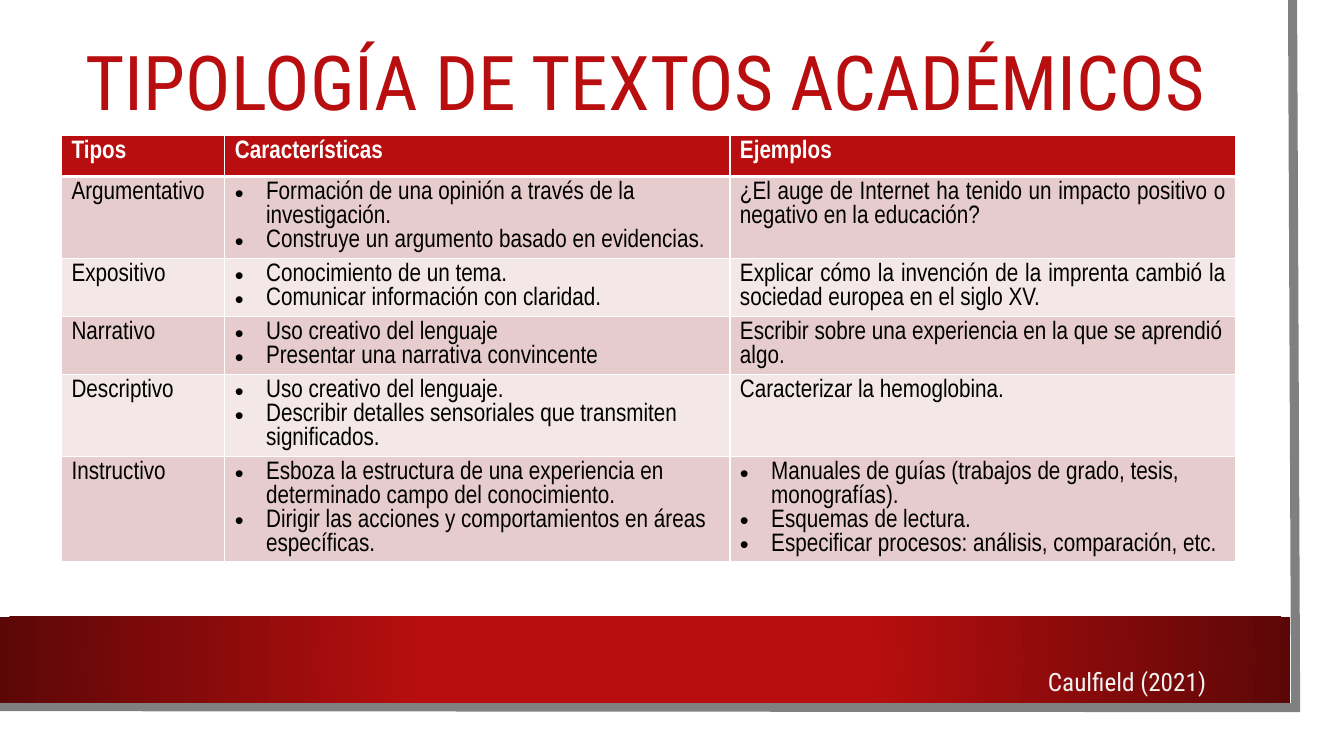
import pptx
import pptx.util
import pptx.dml.color
import pptx.enum.shapes
import pptx.enum.text
import pptx.oxml
import pptx.oxml.ns
from lxml import etree

TITLE = "TIPOLOGÍA DE TEXTOS ACADÉMICOS"
CREDIT = "Caulfield (2021) "
# A tuple is a bulleted cell, a string a plain one.
ROWS = [
    ("Tipos", "Características", "Ejemplos"),
    ("Argumentativo",
     ("Formación de una opinión a través de la investigación.",
      "Construye un argumento basado en evidencias."),
     "¿El auge de Internet ha tenido un impacto positivo o negativo en la educación?"),
    ("Expositivo",
     ("Conocimiento de un tema.", "Comunicar información con claridad."),
     "Explicar cómo la invención de la imprenta cambió la sociedad europea en el siglo XV."),
    ("Narrativo",
     ("Uso creativo del lenguaje", "Presentar una narrativa convincente"),
     "Escribir sobre una experiencia en la que se aprendió algo."),
    ("Descriptivo",
     ("Uso creativo del lenguaje.",
      "Describir detalles sensoriales que transmiten significados."),
     "Caracterizar la hemoglobina."),
    ("Instructivo",
     ("Esboza la estructura de una experiencia en determinado campo del conocimiento.",
      "Dirigir las acciones y comportamientos en áreas específicas."),
     ("Manuales de guías (trabajos de grado, tesis, monografías).",
      "Esquemas de lectura.",
      "Especificar procesos: análisis, comparación, etc.")),
]
JUST = {(1, 2), (2, 2)}
COLS = (1.62, 5.01, 5.02)
HIGH = 0.41  # least row height; rows grow with their text
HUES = {"red": "B80E0F", "dark": "5C0707", "gray": "808080", "white": "FFFFFF",
        "black": "000000", "odd": "E6CCCC", "even": "F3E7E7", "pale": "F2F2F2"}
HEAD, BODY = "Roboto Condensed", "Arial Narrow"

Inches, Pt = pptx.util.Inches, pptx.util.Pt
ALIGN = pptx.enum.text.PP_ALIGN
NS = pptx.oxml.ns.nsdecls("a")
qn = pptx.oxml.ns.qn


def hue(name):
    return pptx.dml.color.RGBColor.from_string(HUES[name])


def style(para, face, size, tone, bold=False):
    for run in para.runs:
        font = run.font
        font.name, font.size, font.bold = face, Pt(size), bold
        font.color.rgb = hue(tone)
    end = etree.SubElement(para._p, qn("a:endParaRPr"))
    end.set("sz", str(size * 100))
    etree.SubElement(end, qn("a:latin")).set("typeface", face)


def bullet(para):
    props = para._p.get_or_add_pPr()
    props.set("marL", str(Inches(0.31)))
    props.set("indent", str(-Inches(0.31)))
    etree.SubElement(props, qn("a:buFont")).set("typeface", "Arial")
    etree.SubElement(props, qn("a:buChar")).set("char", "•")


def border(cell, row):
    """Give white edges, thick between the header and the first row."""
    thick = {(0, "B"), (1, "T")}
    props = cell._tc.get_or_add_tcPr()
    for spot, side in enumerate("LRTB"):
        width = Pt(3 if (row, side) in thick else 1)
        props.insert(spot, pptx.oxml.parse_xml(
            f'<a:ln{side} {NS} w="{width}"><a:solidFill>'
            f'<a:srgbClr val="{HUES["white"]}"/></a:solidFill></a:ln{side}>'))


def frame(slide):
    build = slide.shapes.build_freeform(Inches(12.82), 0)
    build.add_line_segments([(Inches(12.85), Inches(7.02)), (0, Inches(7.01))], close=False)
    edge = build.convert_to_shape()
    edge.shadow.inherit = False
    edge.fill.background()
    edge.line.color.rgb = hue("gray")
    edge.line.width = Pt(6.5)
    etree.SubElement(edge.line._ln, qn("a:miter")).set("lim", "800000")


def band(slide):
    bar = slide.shapes.add_shape(pptx.enum.shapes.MSO_SHAPE.RECTANGLE,
                                 0, Inches(6.12), Inches(12.8), Inches(0.85))
    bar.shadow.inherit = False
    bar.line.fill.background()
    bar.fill.gradient()
    grad = bar._element.spPr.find(qn("a:gradFill"))
    stops = "".join(f'<a:gs pos="{spot * 1000}"><a:srgbClr val="{HUES[tone]}"/></a:gs>'
                    for spot, tone in ((34, "red"), (100, "dark")))
    grad.getparent().replace(grad, pptx.oxml.parse_xml(
        f'<a:gradFill {NS} rotWithShape="1"><a:gsLst>{stops}</a:gsLst><a:path path="circle">'
        '<a:fillToRect l="50000" t="50000" r="50000" b="50000"/></a:path></a:gradFill>'))


def label(slide, text, place, size, tone, align):
    box = slide.shapes.add_textbox(*map(Inches, place)).text_frame
    box.word_wrap = True
    box.text = text
    para = box.paragraphs[0]
    para.alignment = align
    style(para, HEAD, size, tone)
    return box


def grid(slide):
    holder = slide.shapes.add_table(len(ROWS), len(COLS), Inches(0.61), Inches(1.34),
                                    Inches(sum(COLS)), Inches(HIGH * len(ROWS)))
    table = holder.table
    for col, wide in zip(table.columns, COLS):
        col.width = Inches(wide)
    for row, texts in enumerate(ROWS):
        table.rows[row].height = Inches(HIGH)
        for col, text in enumerate(texts):
            cell = table.cell(row, col)
            cell.fill.solid()
            cell.fill.fore_color.rgb = hue("red" if row == 0 else "odd" if row % 2 else "even")
            border(cell, row)
            listed = isinstance(text, tuple)
            cell.text_frame.text = "\n".join(text) if listed else text
            for para in cell.text_frame.paragraphs:
                if listed:
                    bullet(para)
                if (row, col) in JUST:
                    para.alignment = ALIGN.JUSTIFY
                para.line_spacing = Pt(17.1)
                style(para, BODY, 18, "black" if row else "white", row == 0)
    holder.height = Inches(5.11)


def main():
    deck = pptx.Presentation()
    deck.slide_width, deck.slide_height = Inches(13.33), Inches(7.5)
    slide = deck.slides.add_slide(deck.slide_layouts[6])
    frame(slide)
    band(slide)
    title = label(slide, TITLE, (0.75, 0.22, 11.37, 1.26), 54, "red", ALIGN.LEFT)
    title.vertical_anchor = pptx.enum.text.MSO_ANCHOR.MIDDLE
    title.paragraphs[0].line_spacing = 0.9
    grid(slide)
    label(slide, CREDIT, (8.98, 6.56, 3.14, 0.4), 18, "pale", ALIGN.RIGHT)
    deck.save("out.pptx")


if __name__ == "__main__":
    main()
